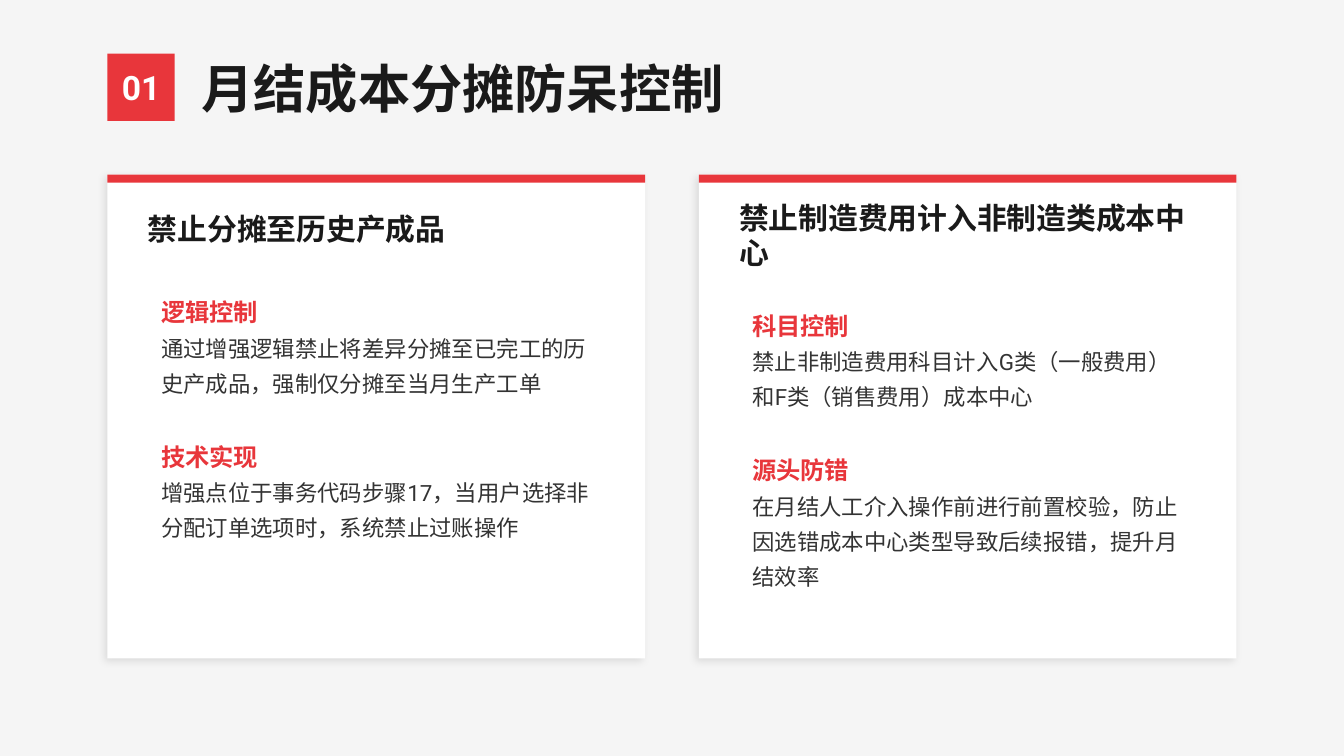
"""Build the slide on foolproof controls for month-end cost allocation."""
from dataclasses import dataclass

from lxml.etree import SubElement
from pptx import Presentation
from pptx.dml.color import RGBColor
from pptx.enum.shapes import MSO_SHAPE as Shape
from pptx.enum.text import MSO_ANCHOR as Anchor, PP_ALIGN as Align
from pptx.oxml.ns import qn
from pptx.shapes.autoshape import Shape as AutoShape
from pptx.slide import Slide
from pptx.text.text import TextFrame, _Paragraph as Paragraph
from pptx.util import Pt

RED = RGBColor(0xE8, 0x36, 0x3B)
WHITE = RGBColor(0xFF, 0xFF, 0xFF)
BACKGROUND = RGBColor(0xF5, 0xF5, 0xF5)
INK = RGBColor(0x1A, 0x1A, 0x1A)
GRAY = RGBColor(0x33, 0x33, 0x33)
FONT = "Roboto"

MARGIN, CARD_TOP = 57.6, 93.6
CARD_WIDTH, CARD_HEIGHT, CARD_GAP = 288, 259.2, 28.8
PADDING, BAR_HEIGHT = 21.6, 4.32
SECTION_GAP = 19.8


@dataclass(frozen=True)
class Area:
    left: float
    top: float
    width: float
    height: float

    def lengths(self) -> tuple[Pt, Pt, Pt, Pt]:
        return Pt(self.left), Pt(self.top), Pt(self.width), Pt(self.height)


@dataclass(frozen=True)
class Section:
    heading: str
    detail: str


@dataclass(frozen=True)
class Card:
    title: str
    title_height: float
    sections: tuple[Section, ...]


CARDS = (
    Card("禁止分摊至历史产成品", 28.8, (
        Section("逻辑控制", "通过增强逻辑禁止将差异分摊至已完工的历史产成品，强制仅分摊至当月生产工单"),
        Section("技术实现", "增强点位于事务代码步骤17，当用户选择非分配订单选项时，系统禁止过账操作"),
    )),
    Card("禁止制造费用计入非制造类成本中心", 36, (
        Section("科目控制", "禁止非制造费用科目计入G类（一般费用）和F类（销售费用）成本中心"),
        Section("源头防错", "在月结人工介入操作前进行前置校验，防止因选错成本中心类型导致后续报错，提升月结效率"),
    )),
)


def add_rectangle(page: Slide, area: Area, color: RGBColor) -> AutoShape:
    box = page.shapes.add_shape(Shape.RECTANGLE, *area.lengths())
    box.fill.solid()
    box.fill.fore_color.rgb = color
    box.line.fill.background()
    box.shadow.inherit = False
    return box


def add_soft_shadow(box: AutoShape) -> None:
    effects = box._element.spPr.find(qn("a:effectLst"))
    shadow = SubElement(effects, qn("a:outerShdw"), blurRad=str(Pt(4)), dist=str(Pt(2)),
                        dir=str(135 * 60000), algn="bl", rotWithShape="0")
    color = SubElement(shadow, qn("a:srgbClr"), val="000000")
    SubElement(color, qn("a:alpha"), val="10000")


def add_span(para: Paragraph, text: str, size: float, color: RGBColor, bold: bool) -> None:
    span = para.add_run()
    span.text = text
    span.font.size = Pt(size)
    span.font.bold = bold
    span.font.color.rgb = color
    span.font.name = FONT
    SubElement(span.font._element, qn("a:ea"), typeface=FONT)


def add_text_frame(page: Slide, area: Area) -> TextFrame:
    frame = page.shapes.add_textbox(*area.lengths()).text_frame
    frame.word_wrap = True
    return frame


def add_label(page: Slide, area: Area, text: str, size: float, color: RGBColor,
              align: Align = Align.LEFT) -> None:
    frame = add_text_frame(page, area)
    frame.margin_left = frame.margin_top = frame.margin_right = frame.margin_bottom = 0
    frame.vertical_anchor = Anchor.MIDDLE
    para = frame.paragraphs[0]
    para.alignment = align
    add_span(para, text, size, color, True)


def add_sections(page: Slide, area: Area, sections: tuple[Section, ...]) -> None:
    frame = add_text_frame(page, area)
    for index, section in enumerate(sections):
        heading = frame.add_paragraph() if index else frame.paragraphs[0]
        if index:
            heading.space_before = Pt(SECTION_GAP)
        detail = frame.add_paragraph()
        heading.line_spacing = detail.line_spacing = 1.3
        add_span(heading, section.heading, 13, RED, True)
        add_span(detail, section.detail, 12, GRAY, False)


def add_card(page: Slide, card: Card, left: float) -> None:
    add_soft_shadow(add_rectangle(page, Area(left, CARD_TOP, CARD_WIDTH, CARD_HEIGHT), WHITE))
    add_rectangle(page, Area(left, CARD_TOP, CARD_WIDTH, BAR_HEIGHT), RED)
    text_left, text_width = left + PADDING, CARD_WIDTH - 2 * PADDING
    title_top = CARD_TOP + 14.4
    add_label(page, Area(text_left, title_top, text_width, card.title_height), card.title, 16, INK)
    body_top = title_top + card.title_height + 14.4
    add_sections(page, Area(text_left, body_top, text_width, 180), card.sections)


def main() -> None:
    deck = Presentation()
    deck.slide_width, deck.slide_height = Pt(720), Pt(405)
    page = deck.slides.add_slide(deck.slide_layouts[6])
    page.background.fill.solid()
    page.background.fill.fore_color.rgb = BACKGROUND

    badge = Area(MARGIN, 28.8, 36, 36)
    add_rectangle(page, badge, RED)
    add_label(page, badge, "01", 18, WHITE, Align.CENTER)
    add_label(page, Area(108, 28.8, 504, 36), "月结成本分摊防呆控制", 28, INK)
    for index, card in enumerate(CARDS):
        add_card(page, card, MARGIN + index * (CARD_WIDTH + CARD_GAP))
    deck.save("out.pptx")


if __name__ == "__main__":
    main()
